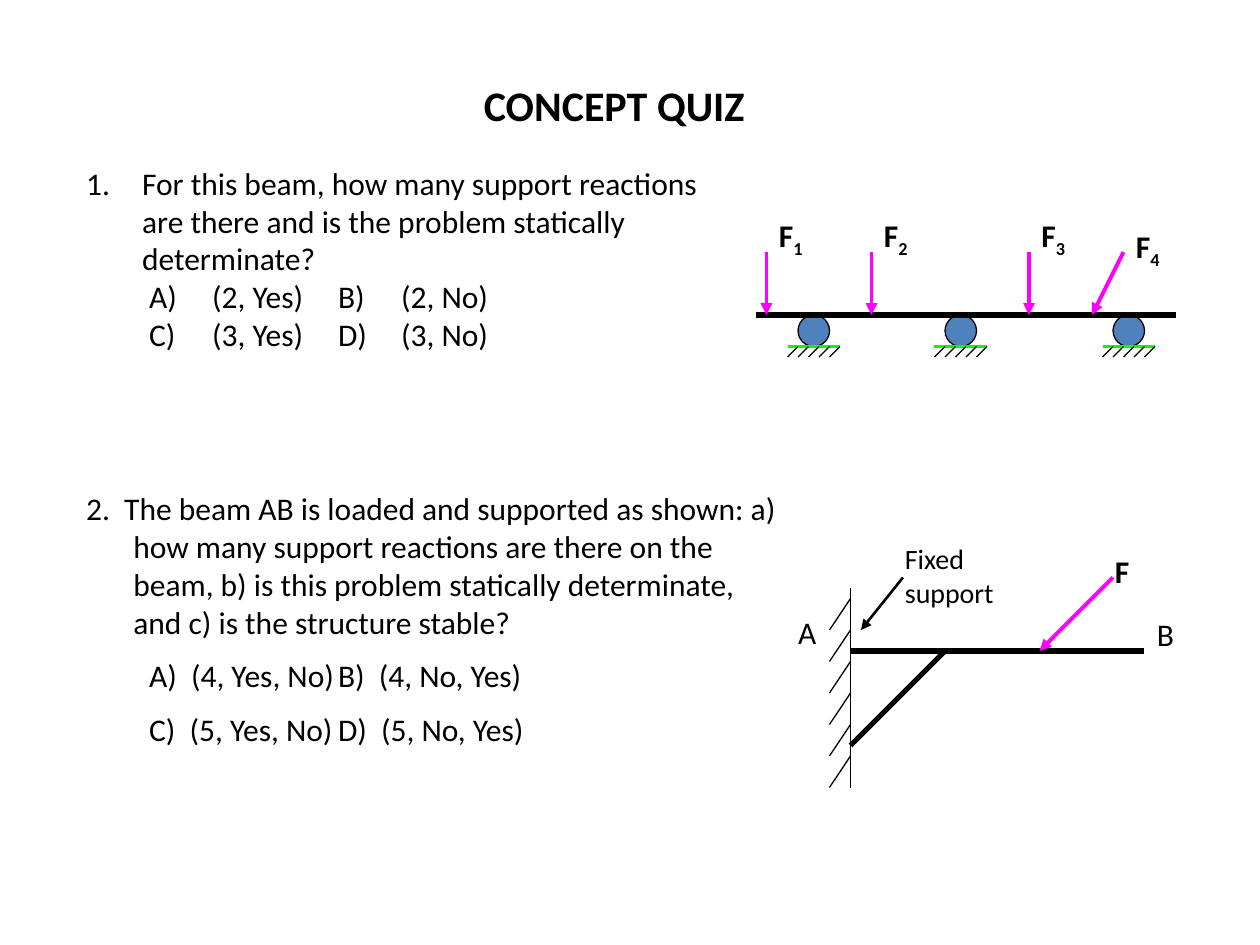
"""Build the concept quiz slide on beams and their support reactions."""
from dataclasses import dataclass

from lxml import etree
from pptx import Presentation
from pptx.dml.color import RGBColor
from pptx.enum.shapes import MSO_CONNECTOR, MSO_SHAPE
from pptx.enum.text import MSO_ANCHOR, MSO_AUTO_SIZE, PP_ALIGN
from pptx.oxml.ns import qn
from pptx.util import Pt

STRAIGHT = MSO_CONNECTOR.STRAIGHT
OVAL = MSO_SHAPE.OVAL
TOP = MSO_ANCHOR.TOP
NO_FIT = MSO_AUTO_SIZE.NONE
CENTER = PP_ALIGN.CENTER
TWO_CONTENT = 3
FONT = "Calibri"
COLORS = {"ink": "000000", "force": "FF00FF", "ground": "00FF00", "roller": "4F81BD"}


@dataclass(frozen=True)
class Line:
    start: tuple[float, float]
    end: tuple[float, float]
    width: float = 0.75
    color: str = "ink"
    arrow: bool = False


@dataclass(frozen=True)
class Label:
    text: str
    box: tuple[float, float, float, float]
    subscript: str = ""
    size: float = 18
    bold: bool = False
    wrap: bool = True


@dataclass(frozen=True)
class Item:
    text: str
    hanging: float = 0
    space_before: float = 0
    number: str = ""
    tabs: tuple[float, ...] = ()


ANSWER_TABS = (40, 76, 218, 255)
QUESTION_1 = [
    Item("For this beam, how many support reactions are there and is the problem "
         "statically determinate?", hanging=32, number="arabicPeriod"),
    Item("\tA)\t(2, Yes)\tB)\t(2, No)", tabs=ANSWER_TABS),
    Item("\tC)\t(3, Yes)\tD)\t(3, No)", tabs=ANSWER_TABS),
]
QUESTION_2 = [
    Item("2.  The beam AB is loaded and supported as shown: a) how many support "
         "reactions are there on the beam, b) is this problem statically determinate, "
         "and c) is the structure stable?", hanging=27),
    Item("\tA)  (4, Yes, No)\tB)  (4, No, Yes)", space_before=9, tabs=(27, 171)),
    Item("\tC)  (5, Yes, No)\tD)  (5, No, Yes)", space_before=9, tabs=(27, 171)),
]

BEAM_Y = 180
ROLLER = 18
ROLLER_LEFTS = (456, 540, 636)
BEAM_LINES = [Line((432, BEAM_Y), (672, BEAM_Y), 3)] + [
    Line((tail, 144), (tip, BEAM_Y), 2.25, "force", True)
    for tail, tip in ((438, 438), (498, 498), (588, 588), (642, 624))
]
FORCE_LABELS = [
    Label("F", (left, top, 36, 29), str(number), bold=True)
    for number, (left, top) in enumerate(
        ((438, 120), (498, 120), (588, 120), (642, 126)), start=1)
]

WALL_X = 486
BRACKET_LINES = [
    Line((WALL_X, 336), (WALL_X, 450)),
    Line((WALL_X, 372), (654, 372), 3),
    Line((540, 372), (WALL_X, 426), 3),
    Line((636, 330), (594, 372), 2.25, "force", True),
    Line((516, 330), (492, 360), 1.5, arrow=True),
] + [Line((WALL_X, y), (WALL_X - 12, y + 18)) for y in range(342, 433, 18)]
BRACKET_LABELS = [
    Label("F", (630, 312, 30, 29), bold=True),
    Label("Fixed support", (510, 306, 72, 46), size=16),
    Label("A", (449, 347, 30, 34), wrap=False),
    Label("B", (654, 348, 29, 34), wrap=False),
]


def rgb(name: str) -> RGBColor:
    """Return a named colour."""
    return RGBColor.from_string(COLORS[name])


def place(shape, box: tuple[float, float, float, float]) -> None:
    """Move and size a shape."""
    shape.left, shape.top, shape.width, shape.height = map(Pt, box)


def set_font(para, size: float, bold: bool = False) -> None:
    """Format the font of a whole paragraph."""
    font = para.font
    font.name, font.size, font.bold = FONT, Pt(size), bold
    font.color.rgb = rgb("ink")


def draw_line(shapes, line: Line) -> None:
    """Draw a straight line or arrow."""
    connector = shapes.add_connector(STRAIGHT, *map(Pt, line.start + line.end))
    connector.line.width = Pt(line.width)
    connector.line.color.rgb = rgb(line.color)
    if line.arrow:
        etree.SubElement(connector.line._get_or_add_ln(), qn("a:tailEnd"), type="triangle")
    etree.SubElement(connector._element.spPr, qn("a:effectLst"))


def draw_label(shapes, label: Label) -> None:
    """Write a short label with an optional subscript."""
    frame = shapes.add_textbox(*map(Pt, label.box)).text_frame
    frame.word_wrap = label.wrap
    para = frame.paragraphs[0]
    set_font(para, label.size, label.bold)
    para.add_run().text = label.text
    if label.subscript:
        span = para.add_run()
        span.text = label.subscript
        span.font._element.set("baseline", "-25000")


def draw_roller(shapes, left: float) -> None:
    """Draw a roller standing on hatched ground."""
    roller = shapes.add_shape(OVAL, *map(Pt, (left, BEAM_Y, ROLLER, ROLLER)))
    roller.shadow.inherit = False
    roller.fill.solid()
    roller.fill.fore_color.rgb = rgb("roller")
    roller.line.color.rgb = rgb("ink")
    roller.line.width = Pt(0.75)
    ground = shapes.add_group_shape().shapes
    y = BEAM_Y + ROLLER
    draw_line(ground, Line((left - 6, y), (left + 24, y), 2.25, "ground"))
    for step in range(5):
        x = left + 6 * step
        draw_line(ground, Line((x, y), (x - 6, y + 6)))


def fill_body(body, box: tuple[float, float, float, float], items: list[Item]) -> None:
    """Fill a body placeholder with a question and its answers."""
    place(body, box)
    frame = body.text_frame
    frame.auto_size, frame.vertical_anchor = NO_FIT, TOP
    for index, item in enumerate(items):
        para = frame.add_paragraph() if index else frame.paragraphs[0]
        para.text = item.text
        para.space_before = Pt(item.space_before)
        set_font(para, 18)
        properties = para._p.get_or_add_pPr()
        properties.set("marL", str(Pt(item.hanging)))
        properties.set("indent", str(-Pt(item.hanging)))
        bullet = etree.Element(qn("a:buAutoNum"), type=item.number) if item.number \
            else etree.Element(qn("a:buNone"))
        properties.insert_element_before(bullet, "a:tabLst", "a:defRPr", "a:extLst")
        if item.tabs:
            tab_list = etree.Element(qn("a:tabLst"))
            for position in item.tabs:
                etree.SubElement(tab_list, qn("a:tab"), pos=str(Pt(position)), algn="l")
            properties.insert_element_before(tab_list, "a:defRPr", "a:extLst")


def main() -> None:
    """Build and save the deck."""
    deck = Presentation()
    deck.slide_width, deck.slide_height = Pt(720), Pt(540)
    page = deck.slides.add_slide(deck.slide_layouts[TWO_CONTENT - 0])
    title, first, second = page.placeholders
    place(title, (84, 42, 534, 36))
    title.text_frame.text = "CONCEPT QUIZ"
    heading = title.text_frame.paragraphs[0]
    heading.alignment = CENTER
    set_font(heading, 24, True)
    fill_body(first, (42, 90, 366, 117), QUESTION_1)
    fill_body(second, (42, 276, 414, 218), QUESTION_2)
    for left in ROLLER_LEFTS:
        draw_roller(page.shapes, left)
    for line in BEAM_LINES:
        draw_line(page.shapes, line)
    bracket = page.shapes.add_group_shape().shapes
    for line in BRACKET_LINES:
        draw_line(bracket, line)
    for label in FORCE_LABELS:
        draw_label(page.shapes, label)
    for label in BRACKET_LABELS:
        draw_label(bracket, label)
    deck.save("out.pptx")


if __name__ == "__main__":
    main()
